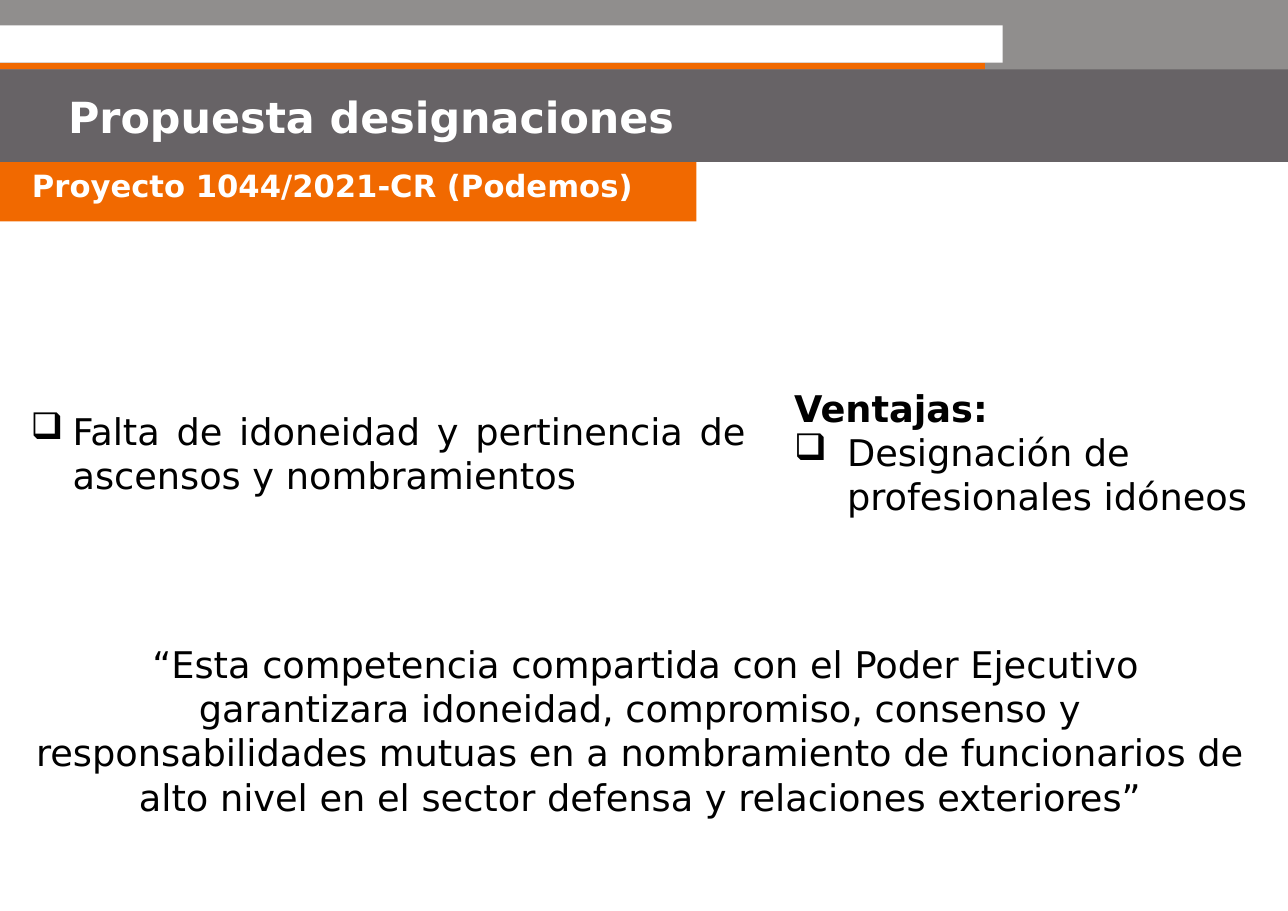
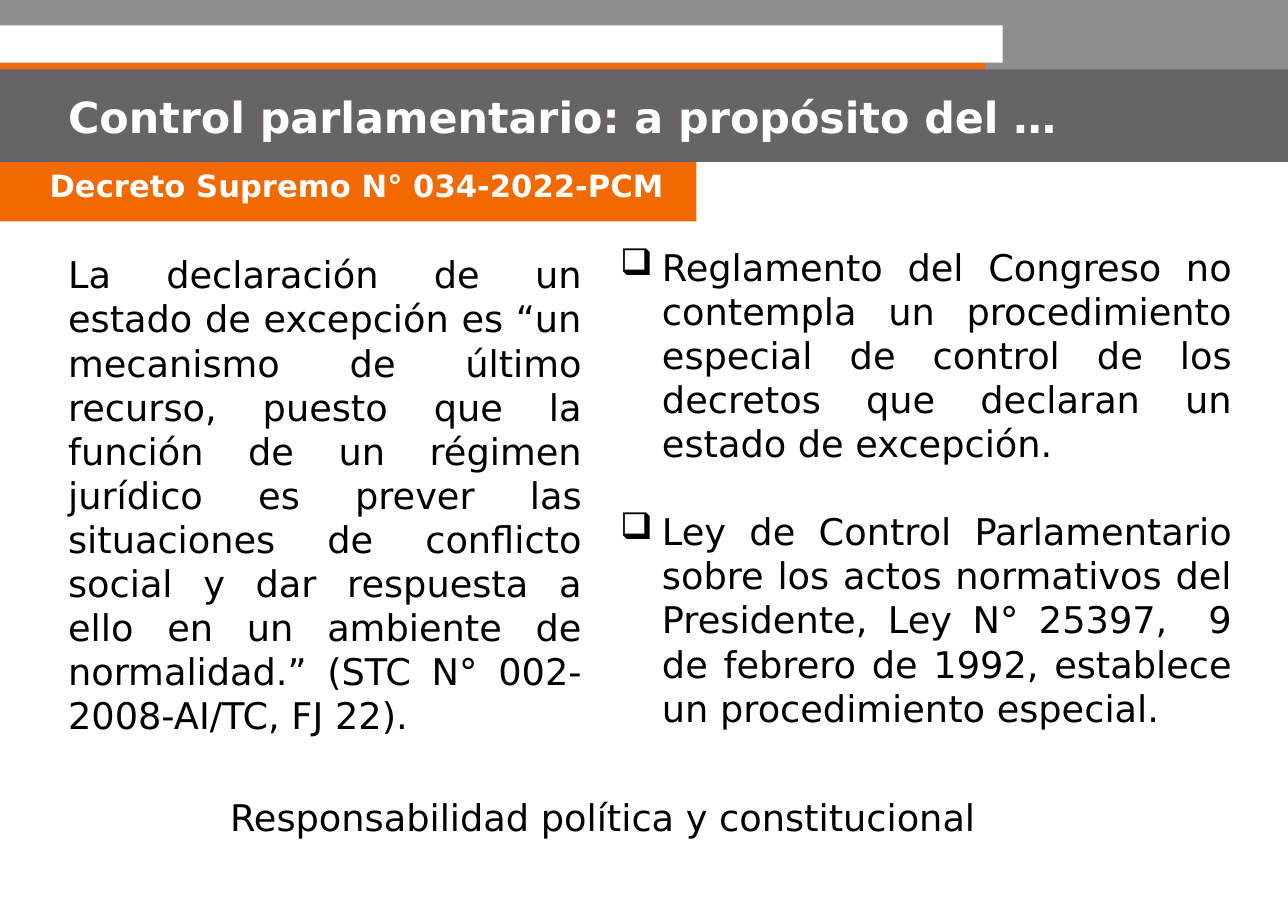
"""Build two slides on parliamentary appointments and oversight."""
from lxml import etree
from pptx import Presentation
from pptx import util as u
from pptx.dml import color
from pptx.enum import shapes, text
from pptx.oxml import ns

PX = 9144
WIDE, HIGH = 1169, 827
FONT = "DejaVu Sans"
ORANGE, GREY, DARK = "F16900", "908E8D", "676366"
WHITE, BLACK = "FFFFFF", "000000"
BODY = 24
LEFT, MID, FULL = (text.PP_ALIGN.LEFT, text.PP_ALIGN.CENTER,
                   text.PP_ALIGN.JUSTIFY)


def px(size):
    """Turn px into EMU."""
    return u.Emu(size * PX)


def tint(code):
    """Turn a hex string into a colour."""
    return color.RGBColor.from_string(code)


def band(slide, left, top, wide, high, fill):
    """Add a plain filled rectangle."""
    bar = slide.shapes.add_shape(
        shapes.MSO_SHAPE.RECTANGLE, px(left), px(top), px(wide), px(high))
    bar.shadow.inherit = False
    bar.fill.solid()
    bar.fill.fore_color.rgb = tint(fill)
    bar.line.fill.background()
    return bar


def write(para, words, size=BODY, ink=BLACK, bold=False, align=LEFT):
    """Add one styled run to a paragraph."""
    para.alignment = align
    run = para.add_run()
    run.text = words
    font = run.font
    font.name, font.size, font.bold = FONT, u.Pt(size), bold
    font.color.rgb = tint(ink)


def bullet(para, indent):
    """Give a paragraph a hanging box bullet."""
    props = para._p.get_or_add_pPr()
    props.set("marL", str(px(indent)))
    props.set("indent", str(-px(indent)))
    etree.SubElement(props, ns.qn("a:buChar")).set("char", "❑")


def box(slide, left, top, wide, high, wrap=True):
    """Add a text box and return its text frame."""
    frame = slide.shapes.add_textbox(
        px(left), px(top), px(wide), px(high)).text_frame
    frame.word_wrap = wrap
    return frame


def page(deck, title, label, inset):
    """Add a slide with the shared bands, title and label."""
    slide = deck.slides.add_slide(deck.slide_layouts[6])
    tab = band(slide, 0, 147, 632, 54, ORANGE).text_frame
    tab.vertical_anchor = text.MSO_ANCHOR.TOP
    tab.margin_left = px(inset)
    write(tab.paragraphs[0], label, 20, WHITE, True)
    band(slide, 0, 0, WIDE, 66, GREY)
    band(slide, 0, 57, 894, 6, ORANGE)
    band(slide, 0, 23, 910, 34, WHITE)
    band(slide, 0, 63, WIDE, 84, DARK)
    head = box(slide, 52, 77, 974, 57)
    write(head.paragraphs[0], title, 28, WHITE, True)
    return slide


def names(deck):
    """Build the slide on appointments."""
    slide = page(deck, "Propuesta designaciones",
                 "Proyecto 1044/2021-CR (Podemos)", 29)
    flaw = box(slide, 18, 366, 669, 91).paragraphs[0]
    write(flaw, "Falta de idoneidad y pertinencia de ascensos y "
          "nombramientos", align=FULL)
    bullet(flaw, 38)
    gains = box(slide, 711, 345, 433, 131)
    write(gains.paragraphs[0], "Ventajas:", bold=True)
    gain = gains.add_paragraph()
    write(gain, "Designación de profesionales idóneos")
    bullet(gain, 48)
    quote = box(slide, 18, 578, 1126, 172).paragraphs[0]
    write(quote, " “Esta competencia compartida con el Poder Ejecutivo "
          "garantizara idoneidad, compromiso, consenso y responsabilidades "
          "mutuas en a nombramiento de funcionarios de alto nivel en el "
          "sector defensa y relaciones exteriores”", align=MID)


def control(deck):
    """Build the slide on parliamentary oversight."""
    slide = page(deck, "Control parlamentario: a propósito del …",
                 "Decreto Supremo N° 034-2022-PCM", 45)
    quote = box(slide, 52, 224, 486, 454).paragraphs[0]
    write(quote, "La declaración de un estado de excepción es “un mecanismo "
          "de último recurso, puesto que la función de un régimen jurídico "
          "es prever las situaciones de conflicto social y dar respuesta a "
          "ello en un ambiente de normalidad.” (STC N° 002-2008-AI/TC, "
          "FJ 22).", align=FULL)
    laws = box(slide, 553, 217, 575, 454)
    rule, law = laws.paragraphs[0], laws.add_paragraph()
    write(rule, "Reglamento del Congreso no contempla un procedimiento "
          "especial de control de los decretos que declaran un estado de "
          "excepción.", align=FULL)
    write(law, "Ley de Control Parlamentario sobre los actos normativos del "
          "Presidente, Ley N° 25397,  9 de febrero de 1992, establece un "
          "procedimiento especial.", align=FULL)
    law.space_before = u.Pt(29)
    for para in (rule, law):
        bullet(para, 38)
    end = box(slide, 199, 717, 701, 50, wrap=False)
    write(end.paragraphs[0], "Responsabilidad política y constitucional")


def main():
    """Build and save the deck."""
    deck = Presentation()
    deck.slide_width, deck.slide_height = px(WIDE), px(HIGH)
    names(deck)
    control(deck)
    deck.save("out.pptx")


if __name__ == "__main__":
    main()
